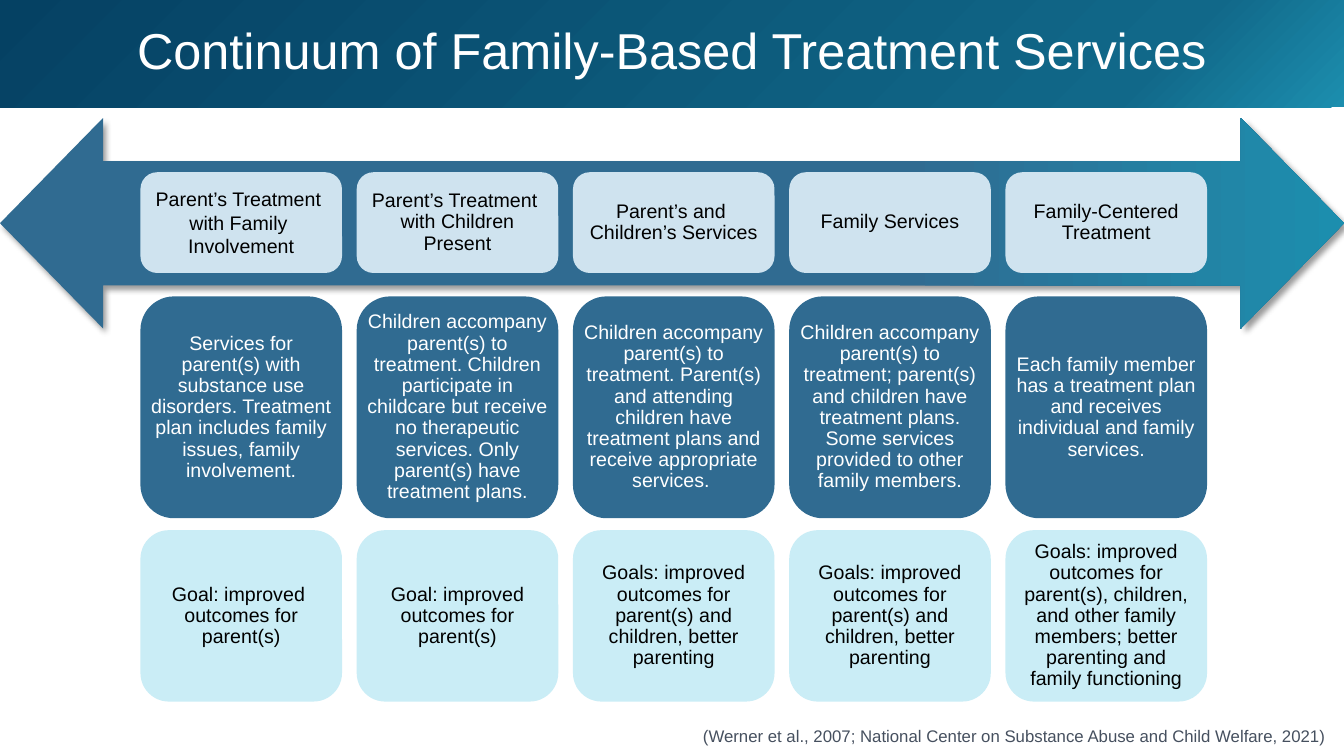
from copy import deepcopy
from lxml.etree import SubElement as Sub
from pptx import Presentation
from pptx.dml.color import RGBColor
from pptx.enum.shapes import MSO_SHAPE as Kind
from pptx.enum.text import MSO_ANCHOR as Anchor, MSO_AUTO_SIZE as Fit, PP_ALIGN as Align
from pptx.oxml.ns import qn
from pptx.util import Cm, Pt

WIDE, HIGH = 33.87, 19.05
FONT = "Arial"
NAVY, TEAL = "306B91", "1C8EAE"

# Top, height, side inset, fill and text colour of each row
ROWS = [
    (4.34, 2.54, 0.25, "CFE3EF", "000000"),
    (7.47, 5.59, 0, NAVY, "FFFFFF"),
    (13.36, 4.32, 0.25, "CAEDF6", "000000"),
]

# Level, services and goal of each column; \v breaks a line, \n a paragraph
LEVELS = [
    ("Parent’s Treatment \vwith Family \nInvolvement",
     "Services for parent(s) with substance use disorders. Treatment plan "
     "includes family issues, family involvement.",
     "Goal: improved \voutcomes for parent(s)"),
    ("Parent’s Treatment \vwith Children Present",
     "Children accompany parent(s) to treatment. Children participate in "
     "childcare but receive no therapeutic services. Only parent(s) have "
     "treatment plans.",
     "Goal: improved outcomes for parent(s)"),
    ("Parent’s and \vChildren’s Services",
     "Children accompany parent(s) to treatment. Parent(s) and attending "
     "children have treatment plans and receive appropriate services. ",
     "Goals: improved outcomes for parent(s) and children, better parenting"),
    ("Family Services",
     "Children accompany parent(s) to treatment; parent(s) and children have "
     "treatment plans. Some services provided to other family members.",
     "Goals: improved outcomes for parent(s) and children, better parenting"),
    ("Family-Centered Treatment",
     "Each family member has a treatment plan and receives individual and "
     "family services.",
     "Goals: improved outcomes for parent(s), children, and other family "
     "members; better parenting and family functioning"),
]


def rgb(code):
    return RGBColor.from_string(code)


def blend(shape, stops, angle):
    """Fill with a gradient; the angle runs counter-clockwise."""
    fill = shape.fill
    fill.gradient()
    fill.gradient_angle = angle
    items = shape._element.spPr.find(".//" + qn("a:gsLst"))
    while len(items) < len(stops):
        items.append(deepcopy(items[-1]))
    for stop, (place, code) in zip(fill.gradient_stops, stops):
        stop.position = place
        stop.color.rgb = rgb(code)


def write(shape, text, size, color, align=Align.CENTER, space=0.9, sides=(0.25, 0.25)):
    frame = shape.text_frame
    frame.word_wrap = True
    frame.auto_size = Fit.NONE
    frame.vertical_anchor = Anchor.MIDDLE
    frame.margin_left, frame.margin_right = map(Cm, sides)
    frame.margin_top = frame.margin_bottom = Cm(0.13)
    for i, part in enumerate(text.split("\n")):
        para = frame.add_paragraph() if i else frame.paragraphs[0]
        para.alignment = align
        para.line_spacing = space
        for j, line in enumerate(part.split("\v")):
            if j:
                para.add_line_break()
            run = para.add_run()
            run.text = line
            font = run.font
            font.name, font.size = FONT, Pt(size)
            font.color.rgb = rgb(color)


def banner(slide, x, y, w, h):
    title = slide.shapes.title
    title.left, title.top, title.width, title.height = map(Cm, (x, y, w, h))
    blend(title, [(0, TEAL), (0.16, "116889"), (1, "054163")], 135)
    write(title, "Continuum of Family-Based Treatment Services", 36, "FFFFFF")


def arrow(slide, x, y, w, h):
    shape = slide.shapes.add_shape(Kind.LEFT_RIGHT_ARROW, *map(Cm, (x, y, w, h)))
    shape.adjustments[0], shape.adjustments[1] = 0.59, 0.49
    blend(shape, [(0, NAVY), (0.67, NAVY), (1, TEAL)], 0)
    shape.line.fill.background()
    # Soft shadow to the lower right
    shape.shadow.inherit = False
    effects = shape._element.spPr.find(qn("a:effectLst"))
    shade = Sub(effects, qn("a:outerShdw"), blurRad=str(Pt(4)), dist=str(Pt(3)),
                dir="2700000", algn="tl", rotWithShape="0")
    tint = Sub(shade, qn("a:srgbClr"), val="000000")
    Sub(tint, qn("a:alpha"), val="40000")


def column(slide, x, w, texts):
    for text, (y, h, side, fill, color) in zip(texts, ROWS):
        card = slide.shapes.add_shape(Kind.ROUNDED_RECTANGLE, *map(Cm, (x, y, w, h)))
        card.shadow.inherit = False
        card.fill.solid()
        card.fill.fore_color.rgb = rgb(fill)
        card.line.fill.background()
        space = 1.0 if "\n" in text else 0.9
        write(card, text, 14, color, space=space, sides=(side, side))


def source(slide, x, y, w, h):
    box = slide.shapes.add_textbox(*map(Cm, (x, y, w, h)))
    write(box, "(Werner et al., 2007; National Center on Substance Abuse and "
          "Child Welfare, 2021)", 12, "46505F", Align.RIGHT, 1.0, (0.25, 0))


def main():
    deck = Presentation()
    deck.slide_width, deck.slide_height = Cm(WIDE), Cm(HIGH)
    slide = deck.slides.add_slide(deck.slide_layouts[5])
    banner(slide, 0, 0, WIDE, 2.7)
    arrow(slide, 0, 2.97, WIDE, 5.31)
    # Five equal columns
    for i, texts in enumerate(LEVELS):
        column(slide, 3.54 + 5.45 * i, 5.08, texts)
    source(slide, 13.2, 17.98, 20.22, 1.12)
    deck.save("out.pptx")


if __name__ == "__main__":
    main()
